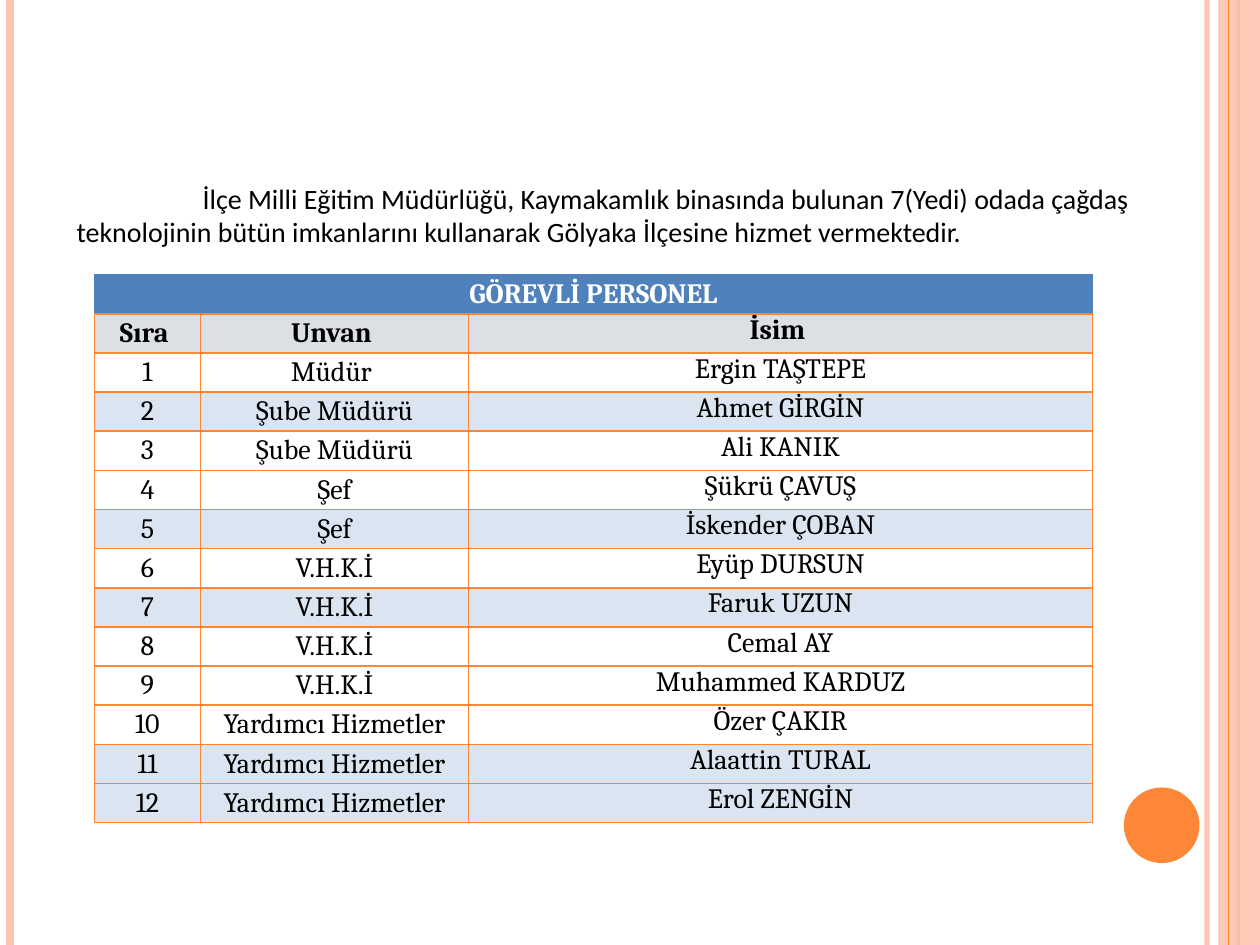
from pptx import Presentation
from pptx.dml.color import RGBColor
from pptx.enum.shapes import MSO_CONNECTOR, MSO_SHAPE
from pptx.enum.text import MSO_ANCHOR, PP_ALIGN
from pptx.oxml.ns import qn
from pptx.util import Inches, Pt
from lxml.etree import SubElement

ORANGE, PEACH, BLUE = "FE8637", "FEC3AE", "4F81BD"
GREY, PALE, WHITE, BLACK = "DCDFE3", "DBE5F1", "FFFFFF", "000000"
WIDTHS = [0.84, 2.13, 4.95]
HEIGHT = 0.311
TITLE = "GÖREVLİ PERSONEL"
HEADS = ("Sıra ", "Unvan ", "İsim ")
STAFF = [
    ("Müdür ", "Ergin TAŞTEPE"),
    ("Şube Müdürü", "Ahmet GİRGİN"),
    ("Şube Müdürü", "Ali KANIK"),
    ("Şef", "Şükrü ÇAVUŞ"),
    ("Şef", "İskender ÇOBAN"),
    ("V.H.K.İ", "Eyüp DURSUN"),
    ("V.H.K.İ", "Faruk UZUN"),
    ("V.H.K.İ", "Cemal AY"),
    ("V.H.K.İ", "Muhammed KARDUZ"),
    ("Yardımcı Hizmetler", "Özer ÇAKIR"),
    ("Yardımcı Hizmetler", "Alaattin TURAL"),
    ("Yardımcı Hizmetler", "Erol ZENGİN"),
]
SHADED = {2, 5, 7, 11, 12}
INTRO = (
    "İlçe Milli Eğitim Müdürlüğü, Kaymakamlık binasında bulunan 7(Yedi) odada "
    "çağdaş teknolojinin bütün imkanlarını kullanarak Gölyaka İlçesine hizmet "
    "vermektedir."
)


def color(code):
    return RGBColor.from_string(code)


def fade(fill, share):
    tint = fill.find(".//" + qn("a:srgbClr"))
    SubElement(tint, qn("a:alpha"), val=str(share * 1000))


def add_rule(slide, x, code, width, share=100):
    rule = slide.shapes.add_connector(
        MSO_CONNECTOR.STRAIGHT, Inches(x), 0, Inches(x), Inches(7.5))
    rule.line.color.rgb = color(code)
    rule.line.width = Pt(width)
    props = rule._element.spPr
    if share < 100:
        fade(props, share)
    SubElement(props, qn("a:effectLst"))


def add_block(slide, kind, box, code, share=100):
    block = slide.shapes.add_shape(kind, *map(Inches, box))
    block.shadow.inherit = False
    block.fill.solid()
    block.fill.fore_color.rgb = color(code)
    block.line.fill.background()
    if share < 100:
        fade(block._element.spPr, share)


def add_run(para, text, font, code, bold=False):
    run = para.add_run()
    run.text = text
    run.font.name = font
    run.font.size = Pt(16)
    run.font.bold = bold
    run.font.color.rgb = color(code)


def add_intro(slide):
    box = slide.shapes.add_textbox(*map(Inches, (0.51, 1.39, 8.72, 0.64)))
    frame = box.text_frame
    frame.word_wrap = True
    para = frame.paragraphs[0]
    para._p.get_or_add_pPr().set("indent", str(Inches(1)))
    add_run(para, INTRO, "Calibri", BLACK)


def set_edges(cell, codes):
    props = cell._tc.get_or_add_tcPr()
    for spot, (side, code) in enumerate(zip("LRTB", codes)):
        edge = props.makeelement(qn("a:ln" + side), {"w": str(Pt(1))})
        fill = SubElement(edge, qn("a:solidFill"))
        SubElement(fill, qn("a:srgbClr"), val=code)
        props.insert(spot, edge)


def set_cell(cell, text, fill, code=BLACK, bold=False, middle=True):
    cell.margin_top = cell.margin_bottom = 0
    cell.vertical_anchor = MSO_ANCHOR.MIDDLE if middle else MSO_ANCHOR.TOP
    cell.fill.solid()
    cell.fill.fore_color.rgb = color(fill)
    para = cell.text_frame.paragraphs[0]
    para.alignment = PP_ALIGN.CENTER
    add_run(para, text, "Cambria", code, bold)


def add_staff(slide):
    rows = [HEADS] + [(str(n), *who) for n, who in enumerate(STAFF, 1)]
    count = len(rows) + 1
    table = slide.shapes.add_table(
        count, len(WIDTHS), Inches(0.75), Inches(2.18),
        Inches(sum(WIDTHS)), Inches(HEIGHT * count)).table
    for col, width in zip(table.columns, WIDTHS):
        col.width = Inches(width)
    for row in table.rows:
        row.height = Inches(HEIGHT)
    top = table.cell(0, 0)
    top.merge(table.cell(0, len(WIDTHS) - 1))
    set_cell(top, TITLE, BLUE, WHITE, True)
    for c in range(len(WIDTHS)):
        set_edges(table.cell(0, c), [BLUE, BLUE, BLUE, ORANGE])
    for r, row in enumerate(rows):
        fill = GREY if r == 0 else PALE if r in SHADED else WHITE
        for c, text in enumerate(row):
            cell = table.cell(r + 1, c)
            set_cell(cell, text, fill, bold=r == 0, middle=c < 2)
            set_edges(cell, [ORANGE] * 4)


def main():
    deck = Presentation()
    deck.slide_width, deck.slide_height = Inches(10), Inches(7.5)
    slide = deck.slides.add_slide(deck.slide_layouts[6])
    add_rule(slide, 9.58, PEACH, 3, 93)
    add_rule(slide, 0.08, PEACH, 4.5)
    add_rule(slide, 9.83, ORANGE, 1.5)
    add_block(slide, MSO_SHAPE.RECTANGLE, (9.67, 0, 0.33, 7.5), PEACH, 87)
    add_rule(slide, 9.75, ORANGE, 0.75)
    add_block(slide, MSO_SHAPE.OVAL, (8.92, 6.25, 0.6, 0.6), ORANGE)
    add_intro(slide)
    add_staff(slide)
    deck.save("out.pptx")


if __name__ == "__main__":
    main()
